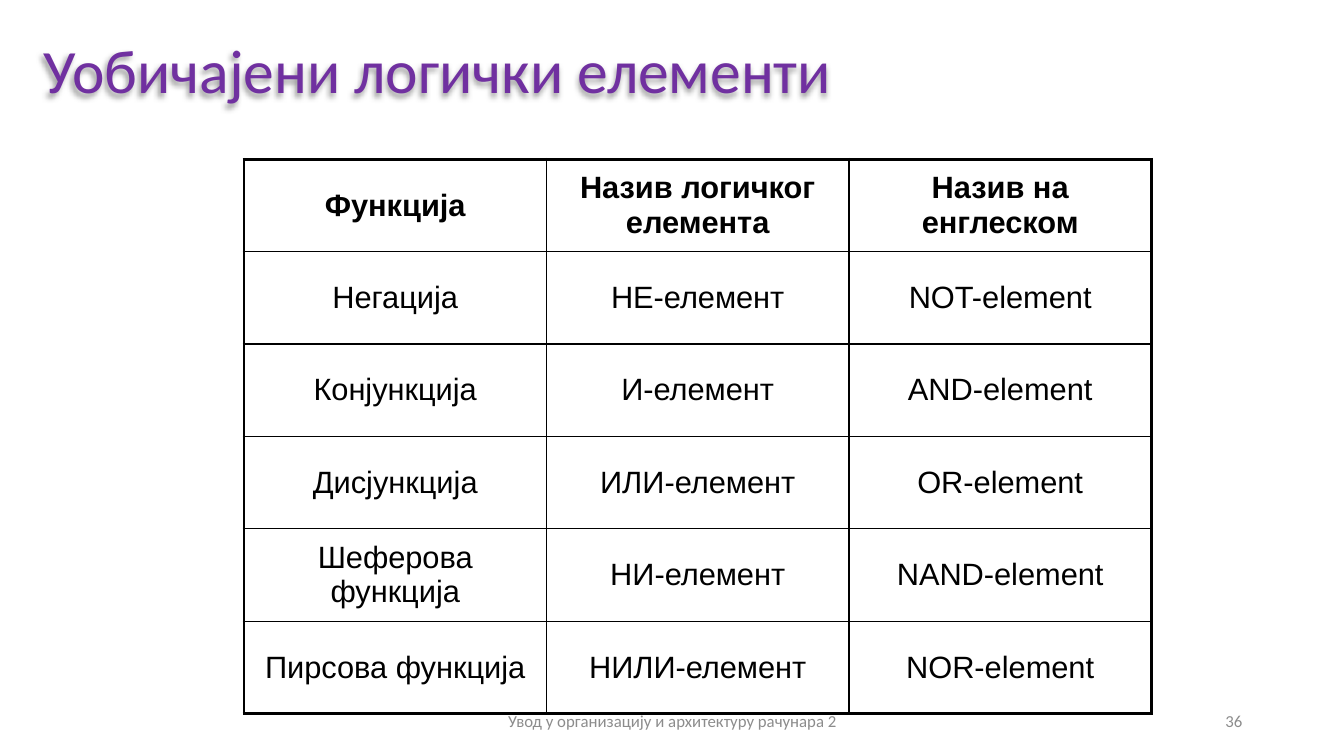
from lxml import etree
from pptx import Presentation
from pptx.dml.color import RGBColor
from pptx.enum.text import MSO_ANCHOR as ANCHOR, PP_ALIGN as ALIGN
from pptx.oxml import parse_xml
from pptx.oxml.ns import nsdecls, qn
from pptx.util import Inches, Pt

ROWS = [
    ("Функција", "Назив логичког елемента", "Назив на енглеском"),
    ("Негација", "НЕ-елемент", "NOT-element"),
    ("Конјункција", "И-елемент", "AND-element"),
    ("Дисјункција", "ИЛИ-елемент", "OR-element"),
    ("Шеферова функција", "НИ-елемент", "NAND-element"),
    ("Пирсова функција", "НИЛИ-елемент", "NOR-element"),
]
THIN, THICK = 1, 2.25


def color(value):
    """Turn a hex string into a colour."""
    return RGBColor.from_string(value)


def style(p, font, size, hex_color, align, bold=False):
    """Format a paragraph and its runs."""
    p.alignment = align
    for r in p.runs:
        r.font.name = font
        r.font.size = Pt(size)
        r.font.bold = bold
        r.font.color.rgb = color(hex_color)


def add_text(s, box, text, size, hex_color, align):
    """Add a wrapped, vertically centred line of text in a box."""
    sp = s.shapes.add_textbox(*map(Inches, box))
    tf = sp.text_frame
    tf.word_wrap = True
    tf.vertical_anchor = ANCHOR.MIDDLE
    tf.text = text
    style(tf.paragraphs[0], "Calibri", size, hex_color, align)
    return sp


def add_title(s, box):
    """Add the purple title with its soft shadow."""
    sp = add_text(s, box, "Уобичајени логички елементи", 44, "7030A0", ALIGN.LEFT)
    sp.text_frame.paragraphs[0].line_spacing = 0.9
    sp._element.spPr.append(parse_xml(
        f'<a:effectLst {nsdecls("a")}>'
        '<a:outerShdw blurRad="50800" dist="38100" dir="8100000" algn="tr" rotWithShape="0">'
        '<a:srgbClr val="000000"><a:alpha val="40000"/></a:srgbClr>'
        '</a:outerShdw></a:effectLst>'))


def set_borders(cell, widths):
    """Draw black cell borders of the given widths: left, right, top, bottom."""
    tc_pr = cell._tc.get_or_add_tcPr()
    for i, (side, width) in enumerate(zip("LRTB", widths)):
        ln = etree.Element(qn(f"a:ln{side}"), w=str(Pt(width)))
        fill = etree.SubElement(ln, qn("a:solidFill"))
        etree.SubElement(fill, qn("a:srgbClr"), val="000000")
        tc_pr.insert(i, ln)


def add_gate_table(s, box):
    """Add the table of logic gates with a thick outer frame."""
    last_row, last_col = len(ROWS) - 1, len(ROWS[0]) - 1
    table = s.shapes.add_table(last_row + 1, last_col + 1, *map(Inches, box)).table
    table.first_row = table.horz_banding = False
    for i, row in enumerate(ROWS):
        for j, text in enumerate(row):
            cell = table.cell(i, j)
            cell.fill.background()
            cell.vertical_anchor = ANCHOR.MIDDLE
            cell.text = text
            style(cell.text_frame.paragraphs[0], "Arial", 22, "000000",
                  ALIGN.CENTER, bold=i == 0)
            edges = (j == 0, j == last_col, i == 0, i == last_row)
            set_borders(cell, [THICK if edge else THIN for edge in edges])


def add_footer(s, box):
    """Add the course name and the slide number."""
    left, top, width, height = box
    add_text(s, (left + 5, top, 3, height), "36", 12, "8C8C8C", ALIGN.RIGHT)
    add_text(s, (left, top, width, height),
             "Увод у организацију и архитектуру рачунара 2", 12, "8C8C8C", ALIGN.CENTER)


def main():
    """Build and save the slide."""
    prs = Presentation()
    prs.slide_width, prs.slide_height = Inches(13.33), Inches(7.5)
    s = prs.slides.add_slide(prs.slide_layouts[6])
    add_title(s, (0.33, 0.13, 11.22, 1.2))
    add_gate_table(s, (2.42, 1.58, 9, 5.5))
    add_footer(s, (4.42, 6.95, 4.5, 0.4))
    prs.save("out.pptx")


if __name__ == "__main__":
    main()
